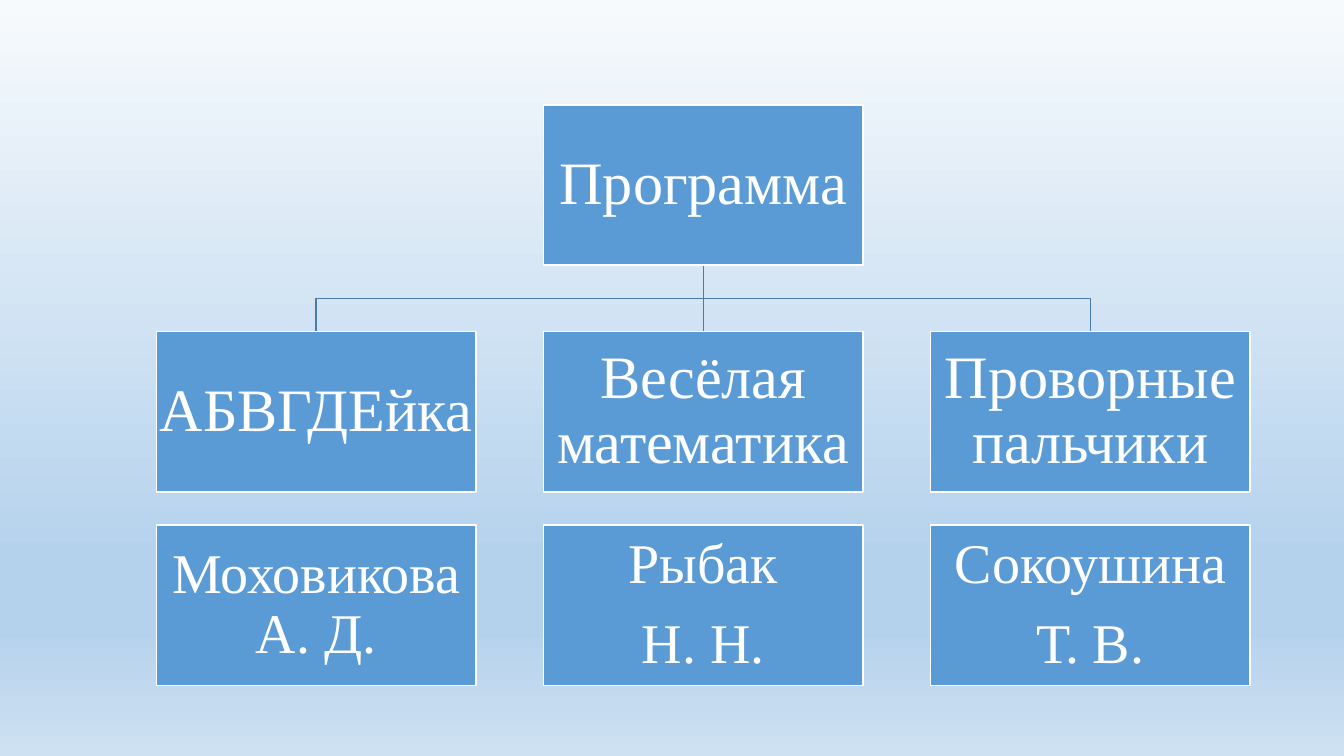
import copy
import dataclasses

import lxml.etree
import pptx
import pptx.dml.color
import pptx.enum.shapes
import pptx.enum.text
import pptx.oxml.ns
import pptx.util

Inches = pptx.util.Inches
qn = pptx.oxml.ns.qn


@dataclasses.dataclass
class Theme:
    box: str = "5B9BD5"
    edge: str = "FFFFFF"
    text: str = "FFFFFF"
    link: str = "497CAB"
    sky: tuple = ((0, "F7FAFD"), (74, "B5D2EC"), (83, "B5D2EC"), (100, "CEE1F2"))
    font: str = "Times New Roman"
    large: int = 43
    small: int = 40
    stroke: int = 1


def apply(target, values):
    for name, value in values.items():
        setattr(target, name, value)


def paint(fill, color):
    fill.solid()
    fill.fore_color.rgb = pptx.dml.color.RGBColor.from_string(color)


class Board:
    def __init__(self, slide, theme):
        self.slide = slide
        self.theme = theme

    def sky(self):
        fill = self.slide.background.fill
        fill.gradient()
        fill.gradient_angle = 270
        stops = next(self.slide.element.iter(qn("a:gsLst")))
        for stop in list(stops)[1:]:
            stops.remove(stop)
        base = stops[0]
        for child in list(base):
            base.remove(child)
        for place, color in self.theme.sky:
            stop = copy.deepcopy(base)
            stop.set("pos", str(place * 1000))
            lxml.etree.SubElement(stop, qn("a:srgbClr"), val=color)
            stops.append(stop)
        stops.remove(base)

    def stroke(self, line, color):
        paint(line.fill, color)
        line.width = pptx.util.Pt(self.theme.stroke)

    def line(self, x, top, end):
        kind = pptx.enum.shapes.MSO_CONNECTOR.STRAIGHT
        link = self.slide.shapes.add_connector(
            kind, Inches(x), Inches(top), Inches(x), Inches(end)
        )
        self.stroke(link.line, self.theme.link)
        props = link.element.find(qn("p:spPr"))
        lxml.etree.SubElement(props, qn("a:effectLst"))

    def branch(self, start, x, top, end):
        mid = (top + end) / 2
        points = [(Inches(a), Inches(b)) for a, b in ((start, mid), (x, mid), (x, end))]
        pen = self.slide.shapes.build_freeform(Inches(start), Inches(top))
        pen.add_line_segments(points, close=False)
        link = pen.convert_to_shape()
        link.fill.background()
        link.shadow.inherit = False
        self.stroke(link.line, self.theme.link)

    def box(self, left, top, wide, high, lines, size):
        kind = pptx.enum.shapes.MSO_SHAPE.RECTANGLE
        shape = self.slide.shapes.add_shape(
            kind, Inches(left), Inches(top), Inches(wide), Inches(high)
        )
        shape.shadow.inherit = False
        paint(shape.fill, self.theme.box)
        self.stroke(shape.line, self.theme.edge)
        frame = shape.text_frame
        pad = dict.fromkeys(
            ("margin_left", "margin_top", "margin_right", "margin_bottom"), Inches(0.03)
        )
        apply(frame, {
            **pad,
            "word_wrap": True,
            "vertical_anchor": pptx.enum.text.MSO_ANCHOR.MIDDLE,
        })
        frame.text = "\n".join(lines)
        for para in frame.paragraphs:
            apply(para, {
                "alignment": pptx.enum.text.PP_ALIGN.CENTER,
                "line_spacing": 0.9,
                "space_after": pptx.util.Pt(round(size * 0.35)),
            })
            font = para.runs[0].font
            apply(font, {"name": self.theme.font, "size": pptx.util.Pt(size)})
            paint(font.fill, self.theme.text)


def main():
    deck = pptx.Presentation()
    apply(deck, {"slide_width": Inches(13.33), "slide_height": Inches(7.5)})
    theme = Theme()
    board = Board(deck.slides.add_slide(deck.slide_layouts[6]), theme)
    board.sky()

    wide, high = 3.17, 1.59
    lefts = [1.55 + 3.84 * i for i in range(3)]
    root, course, tutor = 1.04, 3.29, 5.21
    hub = lefts[1] + wide / 2
    groups = (
        (["АБВГДЕйка"], ["Моховикова А. Д."]),
        (["Весёлая математика"], ["Рыбак", "Н. Н."]),
        (["Проворные пальчики"], ["Сокоушина", "Т. В."]),
    )

    board.line(hub, root + high, course)
    for left in (lefts[0], lefts[2]):
        board.branch(hub, left + wide / 2, root + high, course)
    board.box(lefts[1], root, wide, high, ["Программа"], theme.large)
    for left, (title, name) in zip(lefts, groups):
        board.box(left, course, wide, high, title, theme.large)
        board.box(left, tutor, wide, high, name, theme.small)
    deck.save("out.pptx")


if __name__ == "__main__":
    main()
